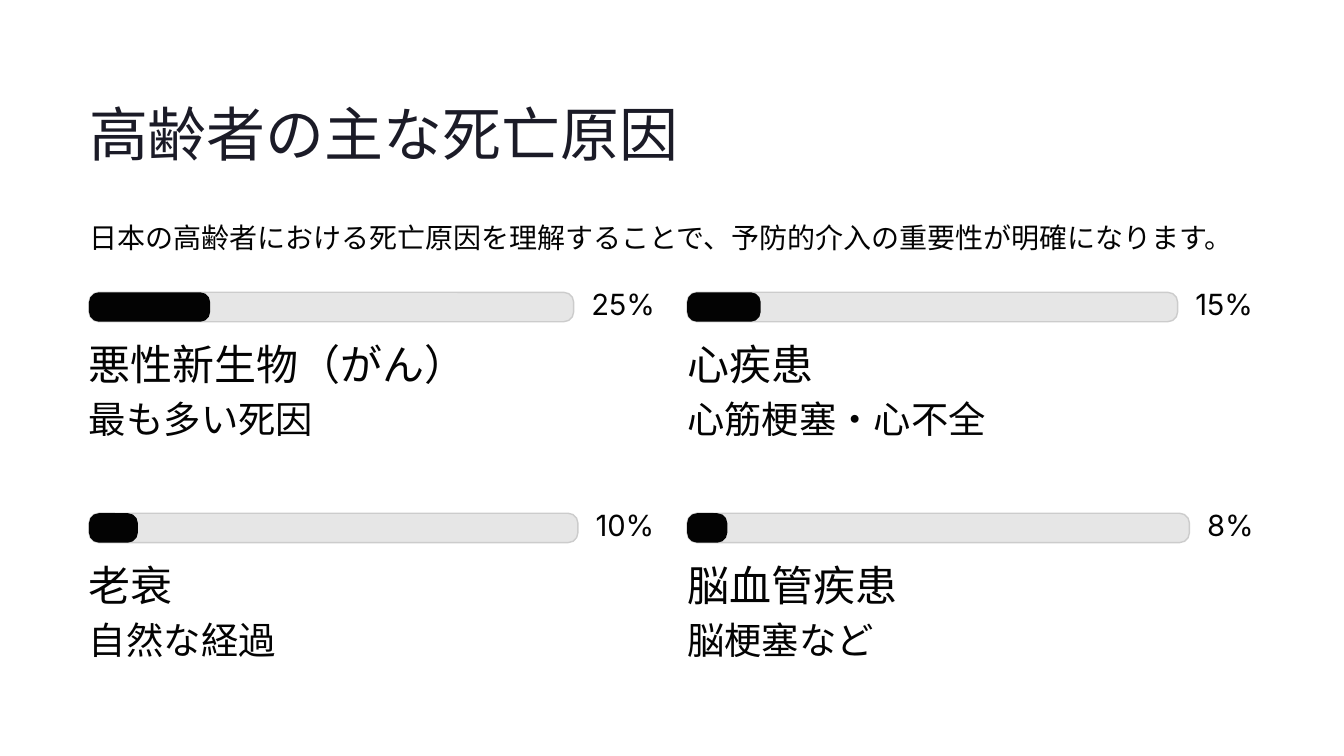
from pptx import Presentation
from pptx.dml.color import RGBColor
from pptx.enum.shapes import MSO_SHAPE
from pptx.util import Inches, Pt

ROUNDED = MSO_SHAPE.ROUNDED_RECTANGLE
COLORS = {"title": "1B1B27", "ink": "030303", "track": "E6E6E6", "border": "CCCCCC"}
HEADING, BODY = "Inter", "Karla"

LEFT, TOP = 1.06, 3.48
COL_STEP, ROW_STEP = 7.12, 2.63
COL_WIDTH, BAR_HEIGHT, LABEL_GAP = 6.76, 0.35, 0.21

# Cause, detail, share in percent, width of the percent label
CAUSES = [
    ("悪性新生物（がん）", "最も多い死因", 25, 0.78),
    ("心疾患", "心筋梗塞・心不全", 15, 0.71),
    ("老衰", "自然な経過", 10, 0.73),
    ("脳血管疾患", "脳梗塞など", 8, 0.57),
]

prs = Presentation()
prs.slide_width, prs.slide_height = Inches(16), Inches(9)
s = prs.slides.add_slide(prs.slide_layouts[6])


def add_text(text, x, y, w, h, font, size, spacing, color="ink"):
    tf = s.shapes.add_textbox(Inches(x), Inches(y), Inches(w), Inches(h)).text_frame
    tf.margin_left = tf.margin_top = tf.margin_right = tf.margin_bottom = 0
    tf.word_wrap = False
    p = tf.paragraphs[0]
    p.text = text
    p.line_spacing = Pt(spacing)
    p.font.name = font
    p.font.size = Pt(size)
    p.font.color.rgb = RGBColor.from_string(COLORS[color])


def add_bar(x, y, w, fill, border=None):
    sp = s.shapes.add_shape(ROUNDED, Inches(x), Inches(y), Inches(w), Inches(BAR_HEIGHT))
    sp.shadow.inherit = False
    # The corner radius is a share of the shorter side
    sp.adjustments[0] = 0.336
    sp.fill.solid()
    sp.fill.fore_color.rgb = RGBColor.from_string(COLORS[fill])
    if border:
        sp.line.color.rgb = RGBColor.from_string(COLORS[border])
        sp.line.width = Pt(1.2)
    else:
        sp.line.fill.background()


add_text("高齢者の主な死亡原因", LEFT, 1.12, 7.08, 0.88, HEADING, 50.5, 63.5, "title")
add_text("日本の高齢者における死亡原因を理解することで、予防的介入の重要性が明確になります。",
         LEFT, 2.57, 13.89, 0.45, BODY, 24, 32.5)

for i, (cause, detail, share, label_width) in enumerate(CAUSES):
    row, col = divmod(i, 2)
    x, y = LEFT + col * COL_STEP, TOP + row * ROW_STEP
    track_width = COL_WIDTH - LABEL_GAP - label_width
    add_bar(x, y, track_width, "track", "border")
    add_bar(x, y, track_width * share / 100, "ink")
    add_text(f"{share}%", x + COL_WIDTH - label_width, y, label_width, BAR_HEIGHT,
             HEADING, 25, 25)
    add_text(cause, x, y + 0.71, COL_WIDTH, 0.44, HEADING, 36, 31.5)
    add_text(detail, x, y + 1.32, COL_WIDTH, 0.45, BODY, 32, 32.5)

prs.save("out.pptx")
